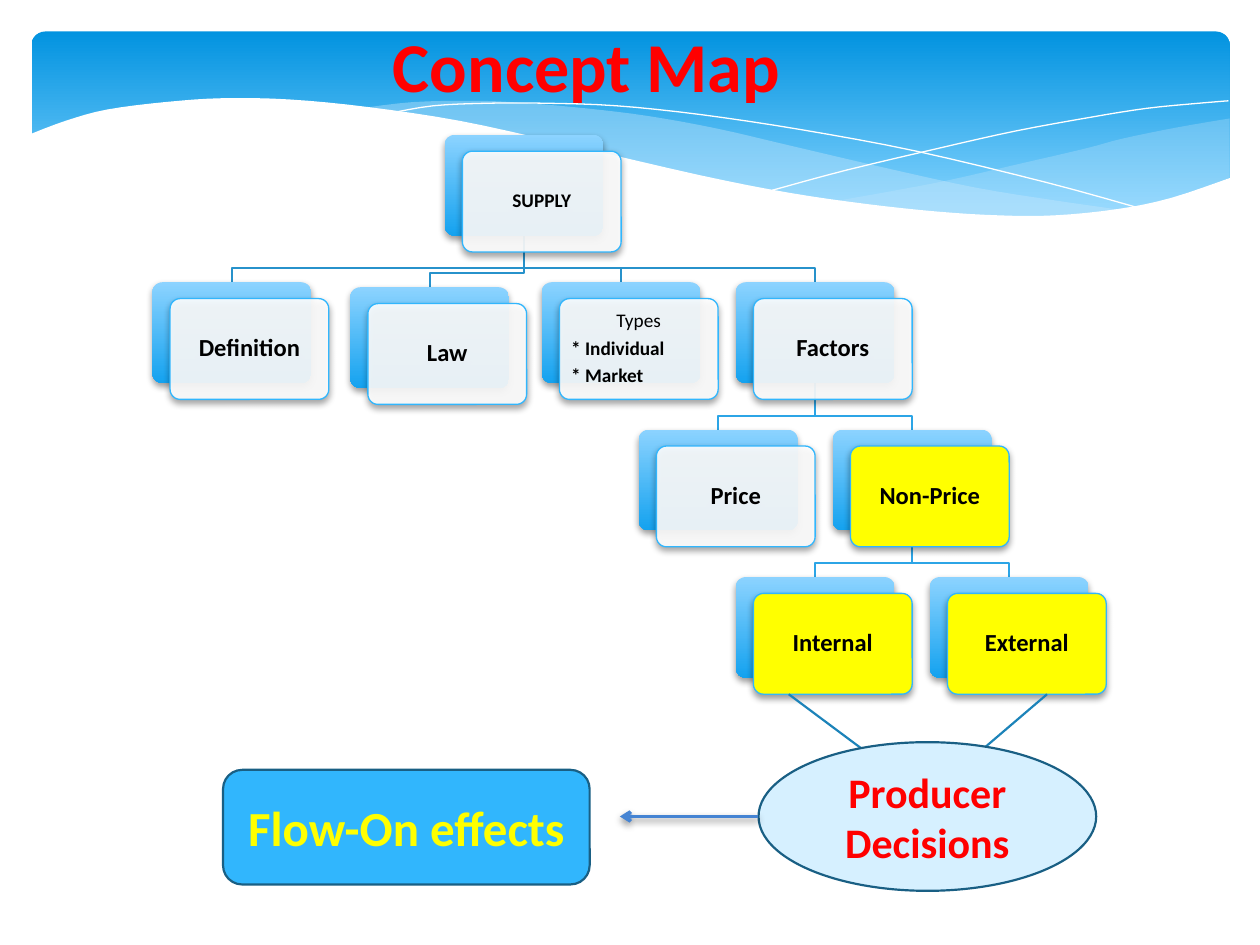
from lxml import etree
from pptx import Presentation
from pptx.dml.color import RGBColor
from pptx.enum.shapes import MSO_CONNECTOR, MSO_SHAPE
from pptx.enum.text import MSO_ANCHOR, PP_ALIGN
from pptx.oxml.ns import qn
from pptx.util import Inches, Pt

ROUNDED, ELLIPSE = MSO_SHAPE.ROUNDED_RECTANGLE, MSO_SHAPE.OVAL
STRAIGHT = MSO_CONNECTOR.STRAIGHT
CENTER, LEFT, MIDDLE = PP_ALIGN.CENTER, PP_ALIGN.LEFT, MSO_ANCHOR.MIDDLE
FONT = "Calibri"

COLORS = {
    "white": "FFFFFF", "black": "000000", "red": "FF0000", "yellow": "FFFF00",
    "banner_top": "0293E0", "banner_bottom": "83D3FE", "wave": "C6E7FC",
    "card_top": "8CD3FF", "card_bottom": "14A2EF", "sky": "31B6FD",
    "first_link": "2792CB", "lower_link": "2CA5E6", "join": "1C83B9",
    "arrow": "4584D3", "outline": "195F84", "pale": "D6F0FF",
}

# Concept cards: left, top, parent, highlighted, size, lines of (text, bold, alignment)
CARD_W, CARD_H = 1.26, 0.8
FRONT_DX, FRONT_DY = 0.14, 0.13
ROWS = [1.07 + 1.17 * level for level in range(4)]
CARDS = {
    "SUPPLY": (3.53, ROWS[0], None, False, 11, [("SUPPLY", True, CENTER)]),
    "Definition": (1.21, ROWS[1], "SUPPLY", False, 14, [("Definition", True, CENTER)]),
    "Law": (2.78, ROWS[1] + 0.04, "SUPPLY", False, 14, [("Law", True, CENTER)]),
    "Types": (4.3, ROWS[1], "SUPPLY", False, 11,
              [("Types", False, CENTER), ("* Individual", True, LEFT),
               ("* Market", True, LEFT)]),
    "Factors": (5.84, ROWS[1], "SUPPLY", False, 14, [("Factors", True, CENTER)]),
    "Price": (5.07, ROWS[2], "Factors", False, 14, [("Price", True, CENTER)]),
    "Non-Price": (6.61, ROWS[2], "Factors", True, 14, [("Non-Price", True, CENTER)]),
    "Internal": (5.84, ROWS[3], "Non-Price", True, 14, [("Internal", True, CENTER)]),
    "External": (7.38, ROWS[3], "Non-Price", True, 14, [("External", True, CENTER)]),
}

# Outcomes: preset, left, top, width, height, fill, text, size, text colour
OUTCOMES = [
    (ELLIPSE, 6.02, 5.89, 2.68, 1.18, "pale", "Producer Decisions", 24, "red"),
    (ROUNDED, 1.77, 6.11, 2.91, 0.91, "sky", "Flow-On effects", 28, "yellow"),
]
JOINS = [((6.26, 5.51), (6.89, 5.98)), ((8.31, 5.51), (7.76, 5.98))]
ARROW = ((6.02, 6.48), (4.92, 6.48))

# Key points of the banner curves
RIGHT_TOP = [(9.76, 0.94), (9.35, 1.01), (8.91, 1.1), (8.61, 1.18), (8.05, 1.31),
             (7.53, 1.43), (7.06, 1.52), (6.61, 1.6)]
RIGHT_BOTTOM = [(6.61, 1.6), (7.05, 1.65), (7.45, 1.69), (7.81, 1.72), (8.24, 1.72),
                (8.63, 1.7), (8.97, 1.65), (9.35, 1.56), (9.76, 1.41)]
LONG_TOP = [(8.93, 1.67), (8.37, 1.59), (7.75, 1.49), (7.06, 1.34), (6.29, 1.16),
            (5.69, 1.02), (5.14, 0.92), (4.65, 0.86), (4.2, 0.82), (3.8, 0.8),
            (3.28, 0.81), (2.86, 0.86)]
LONG_BOTTOM = [(2.86, 0.86), (3.42, 0.94), (4.04, 1.06), (4.91, 1.26), (5.66, 1.43),
               (6.34, 1.56), (6.95, 1.65), (7.48, 1.7), (7.96, 1.73), (8.38, 1.72),
               (8.93, 1.67)]
FALLING = [(3.09, 0.9), (3.44, 0.84), (3.87, 0.82), (4.33, 0.82), (4.89, 0.84),
           (5.56, 0.91), (6.36, 1.03), (7.27, 1.2), (8.31, 1.45), (9.07, 1.66)]
RISING = [(6.13, 1.51), (6.72, 1.35), (7.48, 1.17), (8.06, 1.04), (8.66, 0.93),
          (9.1, 0.86), (9.51, 0.82), (9.75, 0.8)]
WHITE_EDGE = [(9.77, 1.41), (9.3, 1.57), (8.87, 1.66), (8.37, 1.71), (7.93, 1.71),
              (7.44, 1.68), (6.88, 1.62), (6.26, 1.53), (5.55, 1.39), (4.47, 1.14),
              (3.65, 0.96), (2.92, 0.85), (2.3, 0.79), (1.77, 0.78), (1.32, 0.81),
              (0.85, 0.87), (0.52, 0.96), (0.23, 1.07)]

prs = Presentation()
prs.slide_width, prs.slide_height = Inches(10), Inches(7.5)
slide = prs.slides.add_slide(prs.slide_layouts[6])
shapes = slide.shapes


def rgb(name):
    return RGBColor.from_string(COLORS[name])


def set_fill(shape, color, opacity=100):
    shape.fill.solid()
    shape.fill.fore_color.rgb = rgb(color)
    if opacity < 100:
        tint = shape.fill._xPr.find(qn("a:solidFill"))[0]
        etree.SubElement(tint, qn("a:alpha"), val=str(opacity * 1000))


def set_gradient(shape, top, bottom, end=1.0):
    shape.fill.gradient()
    shape.fill.gradient_angle = 270
    for stop, color, position in zip(shape.fill.gradient_stops, (top, bottom), (0, end)):
        stop.color.rgb = rgb(color)
        stop.position = position


def set_line(shape, color=None, width=0):
    if color is None:
        shape.line.fill.background()
        return
    shape.line.color.rgb = rgb(color)
    shape.line.width = Pt(width)


def add_soft_shadow(effects):
    shadow = etree.SubElement(effects, qn("a:outerShdw"), blurRad=str(Pt(4)),
                              dist=str(Pt(2)), dir="5400000", rotWithShape="0")
    tint = etree.SubElement(shadow, qn("a:srgbClr"), val=COLORS["black"])
    etree.SubElement(tint, qn("a:alpha"), val="38000")


def add_preset(preset, left, top, width, height, corner=None):
    shape = shapes.add_shape(preset, Inches(left), Inches(top), Inches(width), Inches(height))
    shape.shadow.inherit = False
    if corner is not None:
        shape.adjustments[0] = corner
    return shape


def add_outline(points, closed=False):
    corners = [(Inches(x), Inches(y)) for x, y in points]
    builder = shapes.build_freeform(*corners[0])
    builder.add_line_segments(corners[1:], close=closed)
    shape = builder.convert_to_shape()
    shape.shadow.inherit = False
    shape.fill.background()
    return shape


def add_line(start, end, color, width):
    line = shapes.add_connector(STRAIGHT, *(Inches(v) for v in start + end))
    set_line(line, color, width)
    return line, etree.SubElement(line._element.spPr, qn("a:effectLst"))


def smooth(points, steps=4):
    """Catmull-Rom curve through the points."""
    padded = [points[0], *points, points[-1]]
    curve = []
    for a, b, c, d in zip(padded, padded[1:], padded[2:], padded[3:]):
        for t in (step / steps for step in range(steps)):
            curve.append(tuple(
                q + 0.5 * t * (r - p + t * (2 * p - 5 * q + 4 * r - s
                                            + t * (3 * (q - r) + s - p)))
                for p, q, r, s in zip(a, b, c, d)))
    return curve + [points[-1]]


def write(shape, lines, size, color, gap=0):
    frame = shape.text_frame
    frame.word_wrap = True
    for index, (text, bold, alignment) in enumerate(lines):
        paragraph = frame.paragraphs[0] if index == 0 else frame.add_paragraph()
        paragraph.text = text
        paragraph.alignment = alignment
        paragraph.space_after = Pt(gap)
        font = paragraph.font
        font.name, font.size, font.bold = FONT, Pt(size), bold
        font.color.rgb = rgb(color)
    return frame


# Banner with waves
banner = add_preset(ROUNDED, 0.25, 0.25, 9.51, 1.56, 0.07)
set_gradient(banner, "banner_top", "banner_bottom", 0.9)
set_line(banner)
for upper, lower, opacity in ((RIGHT_TOP, RIGHT_BOTTOM, 29), (LONG_TOP, LONG_BOTTOM, 40)):
    wave = add_outline(smooth(upper) + smooth(lower), closed=True)
    set_fill(wave, "wave", opacity)
    set_line(wave)
for strand in (FALLING, RISING):
    set_line(add_outline(smooth(strand)), "white")
white_wave = add_outline(smooth(WHITE_EDGE) + [(0.23, 2.24), (9.77, 2.24)], closed=True)
set_fill(white_wave, "white")
set_line(white_wave)

# Title
title = shapes.add_textbox(Inches(3.02), Inches(0.13), Inches(4.34), Inches(0.77))
write(title, [("Concept Map", True, LEFT)], 40, "red")

# Links from each parent to its children
for left, top, parent, *_ in CARDS.values():
    if parent:
        parent_left, parent_top = CARDS[parent][:2]
        start_x, end_x, bend_y = parent_left + CARD_W / 2, left + CARD_W / 2, top - 0.11
        link = add_outline([(start_x, parent_top + CARD_H), (start_x, bend_y),
                            (end_x, bend_y), (end_x, top)])
        set_line(link, "first_link" if parent == "SUPPLY" else "lower_link", 1.25)

# Cards: a blue back and a labelled front
for left, top, _, highlighted, size, lines in CARDS.values():
    back = add_preset(ROUNDED, left, top, CARD_W, CARD_H, 0.1)
    set_gradient(back, "card_top", "card_bottom")
    set_line(back)
    front = add_preset(ROUNDED, left + FRONT_DX, top + FRONT_DY, CARD_W, CARD_H, 0.1)
    set_fill(front, *(("yellow",) if highlighted else ("white", 90)))
    set_line(front, "sky", 0.75)
    for card in (back, front):
        add_soft_shadow(card._element.spPr.find(qn("a:effectLst")))
    label = write(front, lines, size, "black", gap=0.35 * size)
    label.vertical_anchor = MIDDLE
    label.margin_left = label.margin_right = Inches(0.07)
    label.margin_top = label.margin_bottom = Inches(0.07)
    for paragraph in label.paragraphs:
        paragraph.line_spacing = 0.9

# Outcomes and the lines that lead to them
for start, end in JOINS:
    add_line(start, end, "join", 1.25)
for preset, left, top, width, height, fill, text, size, color in OUTCOMES:
    outcome = add_preset(preset, left, top, width, height)
    set_fill(outcome, fill)
    set_line(outcome, "outline", 1.25)
    write(outcome, [(text, True, CENTER)], size, color).vertical_anchor = MIDDLE
arrow, arrow_effects = add_line(*ARROW, "arrow", 2)
etree.SubElement(arrow.line._get_or_add_ln(), qn("a:tailEnd"), type="arrow")
add_soft_shadow(arrow_effects)

prs.save("out.pptx")
